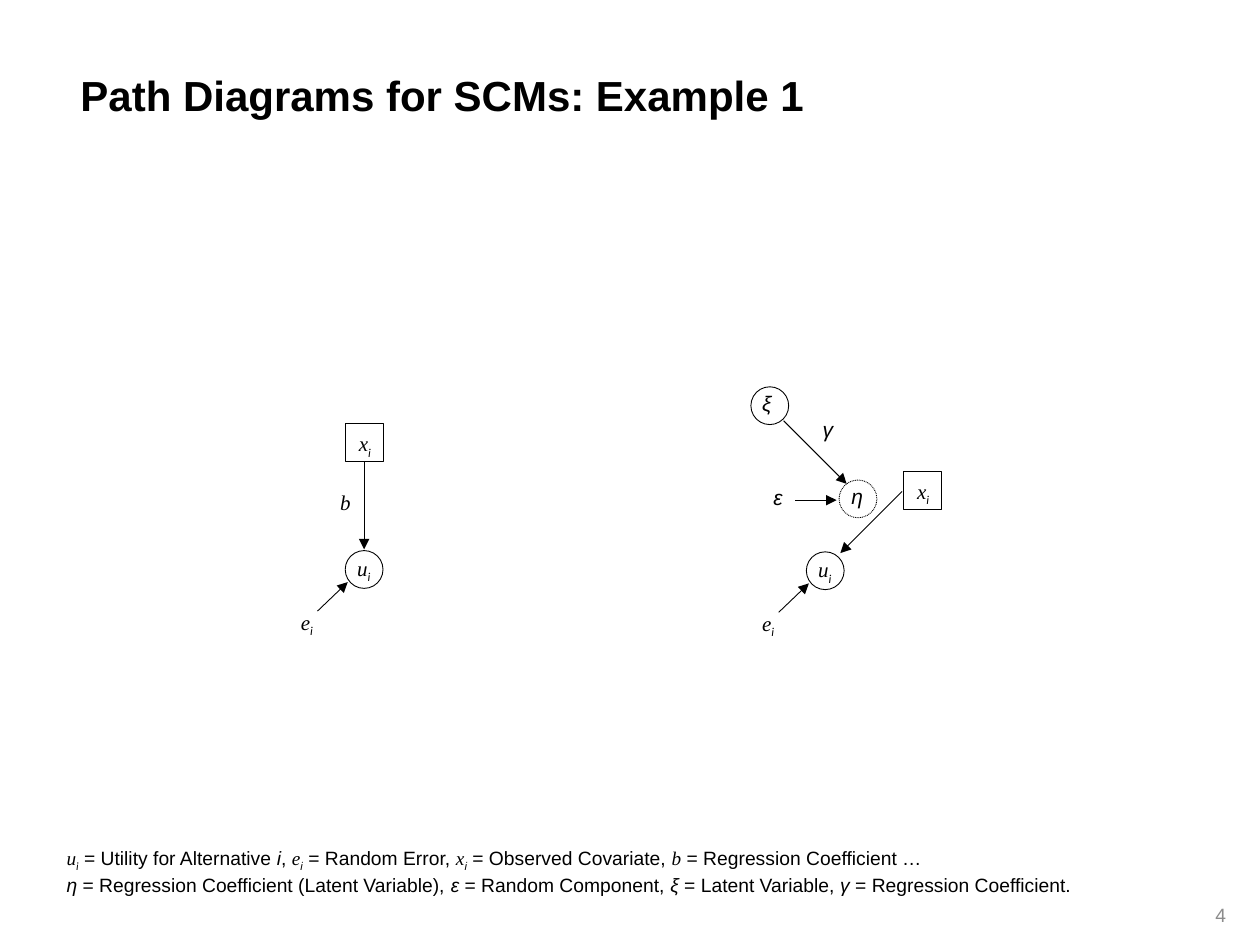
from pptx import Presentation
from pptx.dml.color import RGBColor
from pptx.enum.dml import MSO_LINE
from pptx.enum.shapes import MSO_CONNECTOR, MSO_SHAPE
from pptx.enum.text import MSO_ANCHOR, MSO_AUTO_SIZE, PP_ALIGN
from pptx.oxml.ns import qn
from pptx.util import Inches, Pt
from lxml import etree

STRAIGHT = MSO_CONNECTOR.STRAIGHT
CIRCLE, SQUARE = MSO_SHAPE.OVAL, MSO_SHAPE.RECTANGLE
DOTTED = MSO_LINE.ROUND_DOT
TOP, MIDDLE = MSO_ANCHOR.TOP, MSO_ANCHOR.MIDDLE
LEFT, RIGHT = PP_ALIGN.LEFT, PP_ALIGN.RIGHT
FIT, NO_FIT = MSO_AUTO_SIZE.SHAPE_TO_FIT_TEXT, MSO_AUTO_SIZE.NONE

COLORS = {"ink": "000000", "page_number": "8C8C8C"}
NODE = 0.3

# Run styles: font, italic, subscript
PLAIN = ("Arial", False, False)
GREEK = ("Arial", True, False)
LATIN = ("Times New Roman", True, False)
INDEX = ("Calibri", True, True)
ARIAL_INDEX = ("Arial", True, True)


def indexed(letter, index_style=INDEX):
    """Return the runs of a variable with the subscript i."""
    return [(letter, LATIN), ("i", index_style)]


class PathDiagram:
    def __init__(self, slide):
        self.shapes = slide.shapes
        self.line_width = Pt(0.5)

    def text(self, left, top, width, height, lines, size=12, color="ink",
             bold=False, wrap=False, anchor=TOP, align=LEFT):
        """Add a text box; lines is a list of lists of (text, style) runs."""
        box = self.shapes.add_textbox(Inches(left), Inches(top), Inches(width), Inches(height))
        frame = box.text_frame
        frame.word_wrap = wrap
        frame.auto_size = NO_FIT if wrap else FIT
        frame.vertical_anchor = anchor
        for number, runs in enumerate(lines):
            paragraph = frame.add_paragraph() if number else frame.paragraphs[0]
            paragraph.alignment = align
            for words, (font_name, italic, subscript) in runs:
                run = paragraph.add_run()
                run.text = words
                font = run.font
                font.name, font.size = font_name, Pt(size)
                font.bold, font.italic = bold, italic
                font.color.rgb = RGBColor.from_string(COLORS[color])
                if subscript:
                    run._r.get_or_add_rPr().set("baseline", "-25000")

    def label(self, left, top, runs, width=0.3):
        self.text(left, top, width, 0.3, [runs])

    def outline(self, line, dash=None):
        line.color.rgb = RGBColor.from_string(COLORS["ink"])
        line.width = self.line_width
        if dash:
            line.dash_style = dash

    def node(self, kind, left, top, dash=None):
        shape = self.shapes.add_shape(kind, Inches(left), Inches(top), Inches(NODE), Inches(NODE))
        shape.shadow.inherit = False
        shape.fill.background()
        self.outline(shape.line, dash)

    def arrow(self, start, end):
        connector = self.shapes.add_connector(STRAIGHT, *map(Inches, start + end))
        self.outline(connector.line)
        properties = connector._element.spPr
        etree.SubElement(properties.find(qn("a:ln")), qn("a:tailEnd"), type="triangle")
        etree.SubElement(properties, qn("a:effectLst"))

    def utility(self, left, top):
        """Add the utility circle with its random error below left."""
        self.label(left - 0.005, top - 0.01, indexed("u"), 0.32)
        self.node(CIRCLE, left, top)
        self.arrow((left - 0.22, top + 0.48), (left + 0.02, top + 0.25))
        self.label(left - 0.45, top + 0.415, indexed("e"))

    def covariate(self, left, top):
        self.node(SQUARE, left, top)
        self.label(left + 0.01, top + 0.01, indexed("x"))


def main():
    deck = Presentation()
    deck.slide_width, deck.slide_height = Inches(10), Inches(7.5)
    diagram = PathDiagram(deck.slides.add_slide(deck.slide_layouts[6]))

    diagram.text(0.54, 0.26, 6.79, 0.98, [[("Path Diagrams for SCMs: Example 1", PLAIN)]],
                 size=24, bold=True, wrap=True, anchor=MIDDLE)
    diagram.text(7.5, 7.06, 2.33, 0.4, [[("4", PLAIN)]], size=11,
                 color="page_number", wrap=True, anchor=MIDDLE, align=RIGHT)

    # Observed covariate only
    diagram.covariate(2.74, 3.36)
    diagram.arrow((2.89, 3.66), (2.89, 4.36))
    diagram.label(2.6, 3.84, [("b", LATIN)], 0.29)
    diagram.utility(2.74, 4.37)

    # With latent variable
    diagram.label(5.95, 3.05, [("ξ", GREEK)], 0.28)
    diagram.node(CIRCLE, 5.96, 3.07)
    diagram.arrow((6.22, 3.34), (6.72, 3.84))
    diagram.label(6.43, 3.26, [("γ", GREEK)], 0.27)
    diagram.label(6.04, 3.8, [("ε", GREEK)], 0.28)
    diagram.arrow((6.31, 3.97), (6.64, 3.97))
    diagram.label(6.66, 3.79, [("η", GREEK)])
    diagram.node(CIRCLE, 6.66, 3.81, DOTTED)
    diagram.covariate(7.17, 3.74)
    diagram.arrow((7.16, 3.9), (6.67, 4.39))
    diagram.utility(6.4, 4.38)

    observed_legend = [
        *indexed("u"), (" = Utility for Alternative ", PLAIN), ("i", GREEK), (", ", PLAIN),
        *indexed("e", ARIAL_INDEX), (" = Random Error, ", PLAIN),
        *indexed("x", ARIAL_INDEX), (" = Observed Covariate, ", PLAIN),
        ("b", LATIN), (" = Regression Coefficient …", PLAIN),
    ]
    latent_legend = [
        ("η", GREEK), (" = Regression Coefficient (Latent Variable), ", PLAIN),
        ("ε", GREEK), (" = Random Component, ", PLAIN),
        ("ξ", GREEK), (" = Latent Variable, ", PLAIN),
        ("γ", GREEK), (" = Regression Coefficient.", PLAIN),
    ]
    diagram.text(0.43, 6.67, 8.2, 0.47, [observed_legend, latent_legend], size=11)

    deck.save("out.pptx")


if __name__ == "__main__":
    main()
